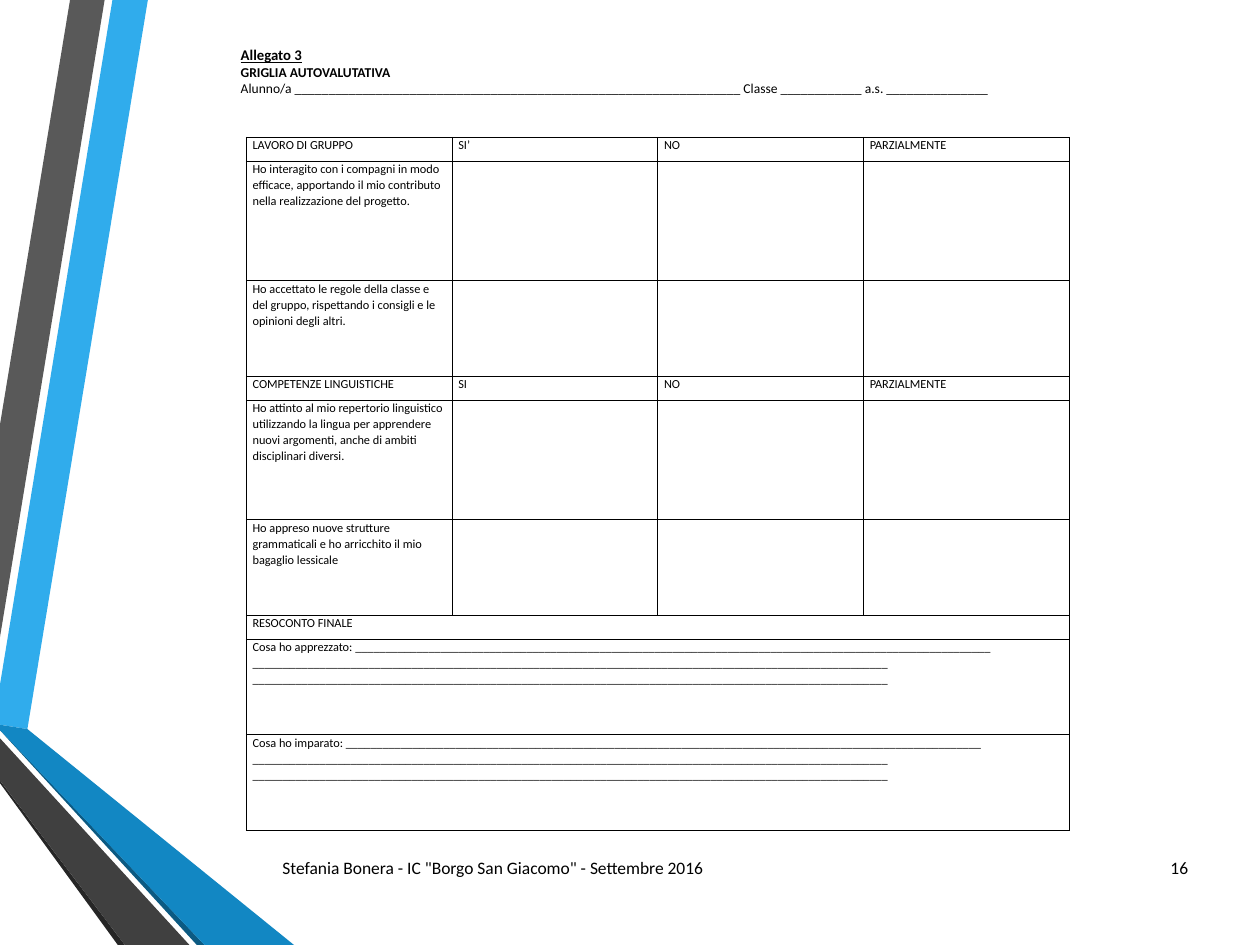
from lxml import etree
from pptx import Presentation
from pptx import util as u
from pptx.dml.color import RGBColor
from pptx.enum import text
from pptx.oxml import ns

Pt = u.Pt
FONT = "Calibri"
COLORS = {
    "ink": "000000", "sky": "30ACEC", "gray": "595959", "coal": "262626",
    "navy": "0C5A82", "blue": "1287C3", "slate": "404040",
}

# Side ribbons, back to front: color and corner points
BANDS = [
    ("sky", [(0, 556.5), (0, 589), (22.3, 592.5), (120.2, 0), (91.4, 0)]),
    ("gray", [(85, 0), (56.9, 0), (0, 344.9), (0, 517.7)]),
    ("coal", [(0, 634.3), (0, 636.5), (95.8, 768), (101.5, 768)]),
    ("navy", [(0, 593), (0, 593.5), (160, 768), (166.3, 768)]),
    ("blue", [(0, 593.3), (166.3, 768), (239, 768), (22.3, 592.5), (0, 589)]),
    ("slate", [(0, 634.3), (101.5, 768), (154, 768), (0, 600)]),
]

# Grid rows: height in units, then cell texts; a wide row spans all columns
UNIT, COL, COLS = 19.42, 167.2, 4
LINES = " ".join(["_" * 104] * 3)
ROWS = [
    (1, ["LAVORO DI GRUPPO", "SI’", "NO", "PARZIALMENTE"]),
    (5, ["Ho interagito con i compagni in modo efficace, apportando il mio "
         "contributo nella realizzazione del progetto."]),
    (4, ["Ho accettato le regole della classe e del gruppo, rispettando i "
         "consigli e le opinioni degli altri."]),
    (1, ["COMPETENZE LINGUISTICHE", "SI", "NO", "PARZIALMENTE"]),
    (5, ["Ho attinto al mio repertorio linguistico utilizzando la lingua per "
         "apprendere nuovi argomenti, anche di ambiti disciplinari diversi."]),
    (4, ["Ho appreso nuove strutture grammaticali e ho arricchito il mio "
         "bagaglio lessicale"]),
    (1, ["RESOCONTO FINALE"]),
    (4, ["Cosa ho apprezzato: " + LINES]),
    (4, ["Cosa ho imparato: " + LINES]),
]
WIDE = 6  # first row that spans all columns


def color(name):
    return RGBColor.from_string(COLORS[name])


def add_run(par, words, size, bold=False, line=False):
    run = par.add_run()
    run.text = words
    font = run.font
    font.name, font.size = FONT, Pt(size)
    font.bold, font.underline = bold, line
    font.color.rgb = color("ink")


def add_band(slide, name, pts):
    pts = [(Pt(x), Pt(y)) for x, y in pts]
    pen = slide.shapes.build_freeform(*pts[0], scale=1.0)
    pen.add_line_segments(pts[1:], close=True)
    band = pen.convert_to_shape()
    band.shadow.inherit = False
    band.fill.solid()
    band.fill.fore_color.rgb = color(name)
    band.line.fill.background()


def add_text(slide, box, pars, align=text.PP_ALIGN.LEFT):
    """Each paragraph is a list of runs: words, size, bold, underline."""
    frame = slide.shapes.add_textbox(*map(Pt, box)).text_frame
    frame.word_wrap = True
    frame.vertical_anchor = text.MSO_ANCHOR.MIDDLE
    for i, runs in enumerate(pars):
        par = frame.add_paragraph() if i else frame.paragraphs[0]
        par.alignment = align
        for run in runs:
            add_run(par, *run)


def add_edges(cell):
    props = cell._tc.get_or_add_tcPr()
    for i, side in enumerate(("lnL", "lnR", "lnT", "lnB")):
        edge = etree.Element(ns.qn("a:" + side), w=str(Pt(1)))
        fill = etree.SubElement(edge, ns.qn("a:solidFill"))
        etree.SubElement(fill, ns.qn("a:srgbClr"), val=COLORS["ink"])
        props.insert(i, edge)


def fill_cell(cell, words):
    cell.fill.background()
    cell.margin_left = cell.margin_right = Pt(5)
    cell.margin_top = cell.margin_bottom = 0
    par = cell.text_frame.paragraphs[0]
    par.line_spacing = 1.07
    if words:
        add_run(par, words, 10)
    else:
        etree.SubElement(par._p, ns.qn("a:endParaRPr"), sz="1000")
    add_edges(cell)


def add_grid(slide):
    high = UNIT * sum(units for units, _ in ROWS)
    grid = slide.shapes.add_table(
        len(ROWS), COLS, Pt(200.3), Pt(111.6), Pt(COL * COLS), Pt(high)).table
    grid.first_row = grid.horz_banding = False
    for col in grid.columns:
        col.width = Pt(COL)
    for r, (units, words) in enumerate(ROWS):
        grid.rows[r].height = Pt(UNIT * units)
        for c in range(COLS):
            fill_cell(grid.cell(r, c), words[c] if c < len(words) else "")
        if r >= WIDE:
            grid.cell(r, 0).merge(grid.cell(r, COLS - 1))


def main():
    deck = Presentation()
    deck.slide_width, deck.slide_height = Pt(1024), Pt(768)
    slide = deck.slides.add_slide(deck.slide_layouts[6])

    # Side ribbons
    for name, pts in BANDS:
        add_band(slide, name, pts)

    # Footer and page number
    add_text(slide, (222.5, 684.7, 595.4, 41),
             [[('Stefania Bonera - IC "Borgo San Giacomo" - Settembre 2016',
                14.2)]])
    add_text(slide, (926.6, 684.7, 46, 41), [[("16", 14.2)]],
             text.PP_ALIGN.RIGHT)

    # Self-assessment grid
    add_grid(slide)

    # Heading
    blank = f"Alunno/a {'_' * 66} Classe {'_' * 12} a.s. {'_' * 15}"
    add_text(slide, (188.6, 33.8, 800, 48.2), [
        [("Allegato 3", 12, True, True)],
        [("GRIGLIA AUTOVALUTATIVA", 11, True)],
        [(blank, 11)],
    ])

    deck.save("out.pptx")


if __name__ == "__main__":
    main()
